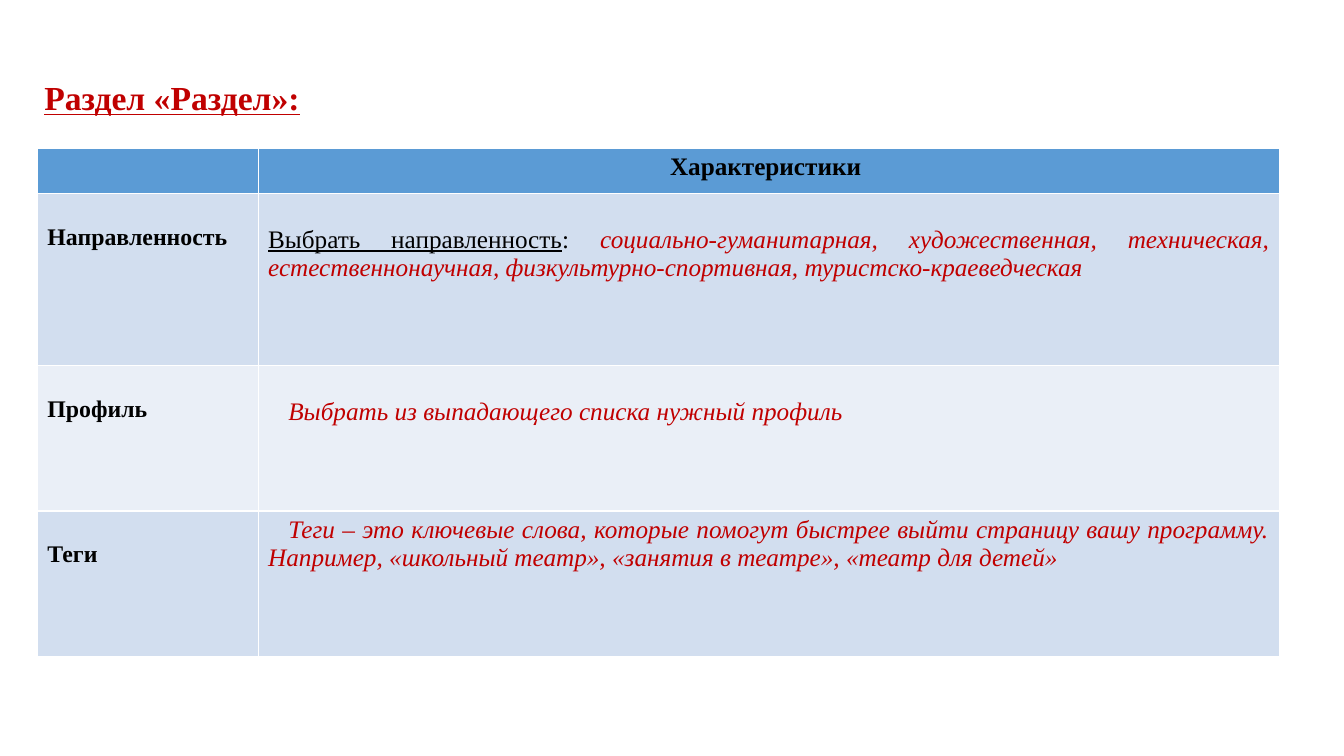
from pptx import Presentation
from pptx.dml.color import RGBColor
from pptx.enum.text import MSO_ANCHOR, PP_ALIGN
from pptx.util import Inches, Pt

BLACK = RGBColor(0x00, 0x00, 0x00)
RED = RGBColor(0xC0, 0x00, 0x00)
HEADER_BLUE = RGBColor(0x5B, 0x9B, 0xD5)
BAND_DARK = RGBColor(0xD2, 0xDE, 0xEF)
BAND_LIGHT = RGBColor(0xEA, 0xEF, 0xF7)

COLUMN_WIDTHS = [2.19, 10.13]
ROW_HEIGHTS = [0.45, 1.71, 1.44, 1.44]
LABEL_TOP = 0.3
DETAIL_TOP = 0.32
CELL_TOP = 0.05
FIRST_LINE_INDENT = 0.2

SECTIONS = [
    ("Направленность", DETAIL_TOP, 0, [
        ("Выбрать направленность", {"underline": True}),
        (": ", {}),
        ("социально-гуманитарная, художественная, техническая, "
         "естественнонаучная, физкультурно-спортивная, туристско-краеведческая",
         {"color": RED, "italic": True}),
    ]),
    ("Профиль", DETAIL_TOP, FIRST_LINE_INDENT, [
        ("Выбрать из выпадающего списка нужный профиль", {"color": RED, "italic": True}),
    ]),
    ("Теги", CELL_TOP, FIRST_LINE_INDENT, [
        ("Теги – это ключевые слова, которые помогут быстрее выйти страницу вашу "
         "программу. Например, «школьный театр», «занятия в театре», «театр для детей»",
         {"color": RED, "italic": True}),
    ]),
]


class SlideBuilder:
    font_name = "Times New Roman"

    def __init__(self, slide):
        self.slide = slide

    def add_run(self, paragraph, text, size, color=BLACK, bold=False, italic=False, underline=False):
        run = paragraph.add_run()
        run.text = text
        font = run.font
        font.name = self.font_name
        font.size = Pt(size)
        font.color.rgb = color
        font.bold = bold
        font.italic = italic
        font.underline = underline

    def add_title(self, text, left, top, width, height):
        shape = self.slide.shapes.add_textbox(Inches(left), Inches(top), Inches(width), Inches(height))
        frame = shape.text_frame
        frame.word_wrap = True
        frame.vertical_anchor = MSO_ANCHOR.MIDDLE
        frame.margin_left = frame.margin_right = Inches(0.07)
        frame.margin_top = Inches(0.04)
        frame.margin_bottom = Inches(0.42)
        self.add_run(frame.paragraphs[0], text, 24, RED, bold=True, underline=True)

    def add_table(self, left, top, column_widths, row_heights):
        table = self.slide.shapes.add_table(
            len(row_heights), len(column_widths), Inches(left), Inches(top),
            Inches(sum(column_widths)), Inches(sum(row_heights))).table
        for column, width in zip(table.columns, column_widths):
            column.width = Inches(width)
        for row, height in zip(table.rows, row_heights):
            row.height = Inches(height)
        return table

    def fill_cell(self, cell, fill, runs, size=18, align=PP_ALIGN.JUSTIFY, top=CELL_TOP, indent=0):
        cell.fill.solid()
        cell.fill.fore_color.rgb = fill
        cell.margin_top = Inches(top)
        paragraph = cell.text_frame.paragraphs[0]
        paragraph.alignment = align
        if indent:
            paragraph_properties = paragraph._p.get_or_add_pPr()
            paragraph_properties.set("indent", str(Inches(indent)))
        for text, style in runs:
            self.add_run(paragraph, text, size, **style)


def main():
    presentation = Presentation()
    presentation.slide_width = Inches(13.33)
    presentation.slide_height = Inches(7.5)
    builder = SlideBuilder(presentation.slides.add_slide(presentation.slide_layouts[6]))

    builder.add_title("Раздел «Раздел»:", 0.37, 0.84, 10.81, 0.63)
    table = builder.add_table(0.37, 1.47, COLUMN_WIDTHS, ROW_HEIGHTS)
    builder.fill_cell(table.cell(0, 0), HEADER_BLUE, [])
    builder.fill_cell(table.cell(0, 1), HEADER_BLUE, [("Характеристики ", {"bold": True})],
                      align=PP_ALIGN.CENTER)
    for row, (label, top, indent, runs) in enumerate(SECTIONS, start=1):
        fill = BAND_DARK if row % 2 else BAND_LIGHT
        builder.fill_cell(table.cell(row, 0), fill, [(label, {"bold": True})], size=17, top=LABEL_TOP)
        builder.fill_cell(table.cell(row, 1), fill, runs, top=top, indent=indent)
    presentation.save("out.pptx")


if __name__ == "__main__":
    main()
